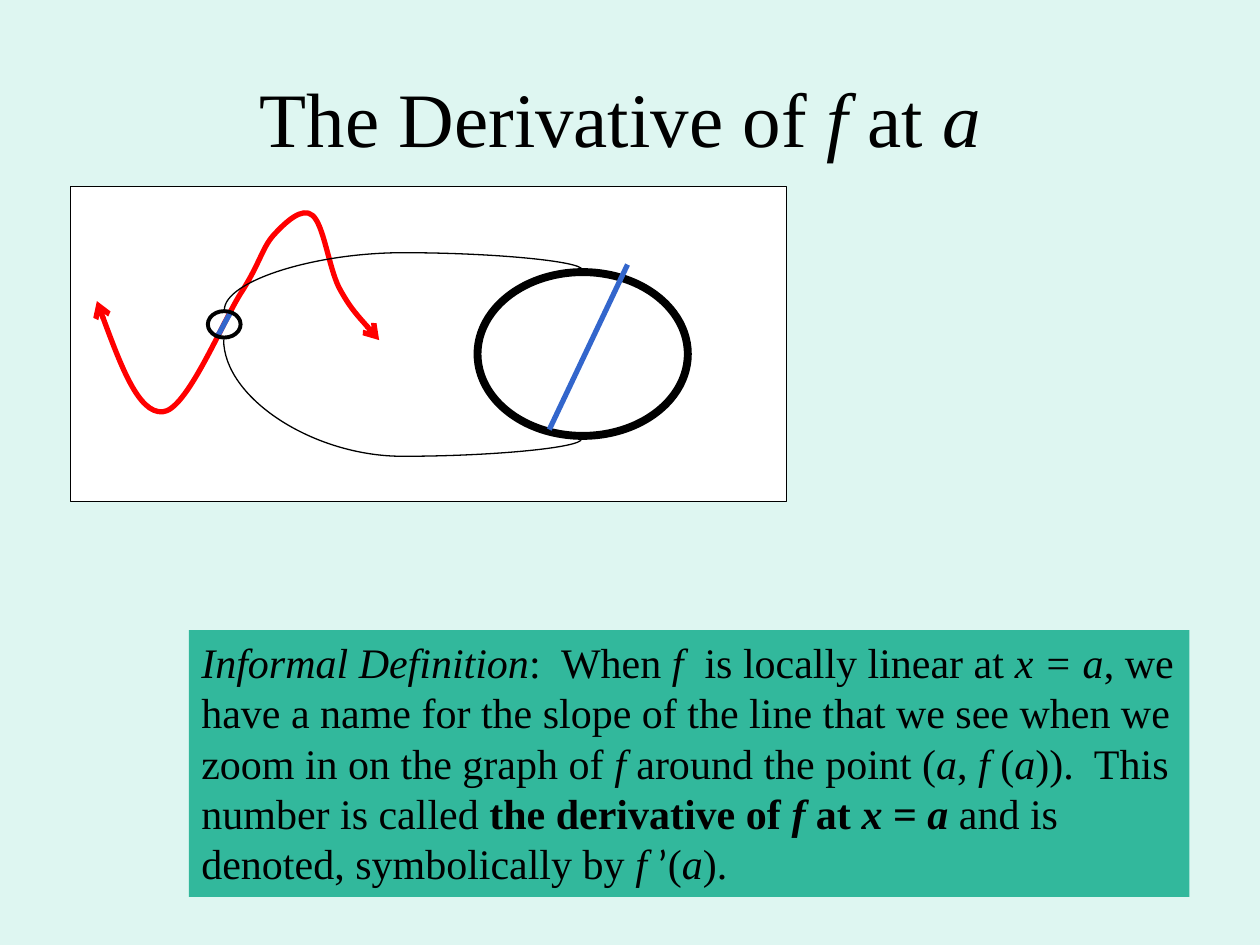
from pptx import Presentation
from pptx.dml.color import RGBColor
from pptx.enum.shapes import MSO_CONNECTOR, MSO_SHAPE
from pptx.enum.text import MSO_ANCHOR, MSO_AUTO_SIZE, PP_ALIGN
from pptx.oxml.ns import qn
from pptx.util import Pt
from lxml.etree import SubElement


def paint(fill, color):
    fill.solid()
    fill.fore_color.rgb = RGBColor.from_string(color)


def outline(shape, color, width):
    """Give a shape or connector a plain line without a shadow."""
    paint(shape.line.fill, color)
    shape.line.width = Pt(width)
    SubElement(shape._element.spPr, qn("a:effectLst"))


deck = Presentation()
deck.slide_width, deck.slide_height = Pt(720), Pt(540)
page = deck.slides.add_slide(deck.slide_layouts[6])
paint(page.background.fill, "DEF6F1")

# White panel behind the graph
panel = page.shapes.add_shape(MSO_SHAPE.RECTANGLE, Pt(40.3), Pt(106.6), Pt(409), Pt(180))
paint(panel.fill, "FFFFFF")
outline(panel, "000000", 0.75)

# Graph of f and its locally linear piece: a start, then three points per Bezier curve
graph = [(55.4, 172.1), (67, 203.8), (79.2, 236.2), (92.9, 235.4),
         (106.6, 234.7), (126.7, 185), (137.5, 167.8),
         (148.3, 151.2), (149.8, 141.8), (156.2, 134.6),
         (163.4, 126.7), (172.8, 118.1), (178.6, 123.1),
         (185, 128.2), (187.9, 152.6), (193.7, 164.2),
         (200.2, 176.4), (212.4, 189.4), (216.7, 194.4)]
local_piece = [(131.8, 178.6), (130.3, 180.7), (126, 189.4), (124.6, 191.5)]

for points, color, arrows in [(graph, "FF0000", True), (local_piece, "3366CC", False)]:
    start, *rest = [(Pt(x), Pt(y)) for x, y in points]
    builder = page.shapes.build_freeform(*start)
    builder.add_line_segments(rest, close=False)
    curve = builder.convert_to_shape()
    curve.fill.background()
    outline(curve, color, 3)
    # Turn each three straight segments into one cubic curve
    segments = list(curve._element.iter(qn("a:lnTo")))
    for first in range(0, len(segments), 3):
        cubic = SubElement(segments[first].getparent(), qn("a:cubicBezTo"))
        for segment in segments[first:first + 3]:
            cubic.append(segment[0])
            segment.getparent().remove(segment)
    if arrows:
        for end in ("a:headEnd", "a:tailEnd"):
            SubElement(curve.line._ln, qn(end), type="arrow")

# Small circle on the graph and its magnified view
for left, top, width, height, weight in [(118.8, 177.8, 18.7, 15.1, 2.25),
                                         (272.9, 155.5, 120.2, 93.6, 4.5)]:
    circle = page.shapes.add_shape(MSO_SHAPE.OVAL, Pt(left), Pt(top), Pt(width), Pt(height))
    circle.fill.background()
    outline(circle, "000000", weight)

# Magnified straight piece
magnified = page.shapes.add_connector(
    MSO_CONNECTOR.STRAIGHT, Pt(313.9), Pt(245.5), Pt(358.6), Pt(151.2))
outline(magnified, "3366CC", 3)

# Curved links between the circles, turned by 270 degrees
for x1, y1, x2, y2, bend in [(218.9, 63.4, 241.9, 267.8, 142400),
                             (258.5, 120.2, 201.6, 324.7, 117300)]:
    link = page.shapes.add_connector(MSO_CONNECTOR.CURVE, Pt(x1), Pt(y1), Pt(x2), Pt(y2))
    outline(link, "000000", 0.75)
    properties = link._element.spPr
    properties.find(qn("a:xfrm")).set("rot", str(270 * 60000))
    adjustments = properties.find(qn("a:prstGeom")).find(qn("a:avLst"))
    SubElement(adjustments, qn("a:gd"), name="adj1", fmla=f"val {bend}")

# Definition box
definition = page.shapes.add_shape(MSO_SHAPE.RECTANGLE, Pt(108), Pt(360), Pt(571.7), Pt(152.6))
paint(definition.fill, "32B89C")
definition.line.fill.background()
definition.shadow.inherit = False
definition.text_frame.auto_size = MSO_AUTO_SIZE.SHAPE_TO_FIT_TEXT

# Title
title = page.shapes.add_textbox(Pt(36), Pt(21.6), Pt(648), Pt(90))

# Text spans; style letters: i italic, b bold
definition_spans = [
    ("Informal Definition", "i"), (":  When ", ""), ("f  ", "i"),
    ("is locally linear at ", ""), ("x = a", "i"),
    (", we have a name for the slope of the line that we see when we zoom in"
     " on the graph of ", ""),
    ("f", "i"), (" around the point (", ""), ("a", "i"), (", ", ""), ("f ", "i"),
    ("(", ""), ("a", "i"), (")).  This number is called ", ""),
    ("the derivative of ", "b"), ("f", "bi"), (" at ", "b"), ("x ", "bi"),
    ("= ", "b"), ("a ", "bi"), ("and is denoted, symbolically by ", ""),
    ("f ", "i"), ("’", ""), ("(", ""), ("a", "i"), (").", "")]
title_spans = [("The Derivative of ", ""), ("f", "i"), (" at ", ""), ("a ", "i")]

for box, spans, size, alignment, anchor in [
        (definition, definition_spans, 24, PP_ALIGN.LEFT, MSO_ANCHOR.TOP),
        (title, title_spans, 44, PP_ALIGN.CENTER, MSO_ANCHOR.MIDDLE)]:
    box.text_frame.word_wrap = True
    box.text_frame.vertical_anchor = anchor
    para = box.text_frame.paragraphs[0]
    para.alignment = alignment
    for text, style in spans:
        span = para.add_run()
        span.text = text
        span.font.name = "Calibri" if text == "’" else "Times New Roman"
        span.font.size = Pt(size)
        span.font.italic = "i" in style
        span.font.bold = "b" in style
        paint(span.font.fill, "000000")

deck.save("out.pptx")
